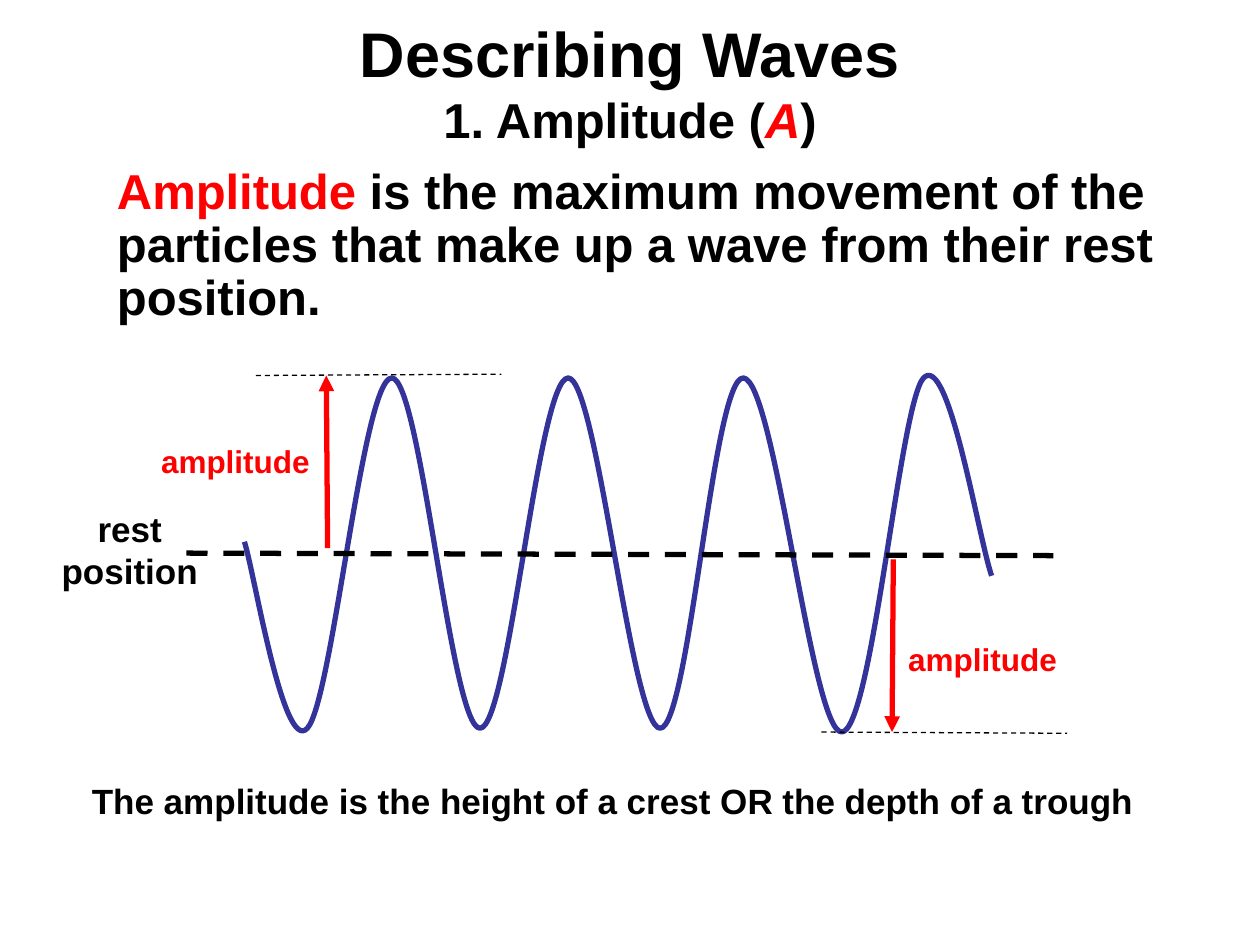
from itertools import chain

from lxml.etree import SubElement
from pptx import Presentation
from pptx.dml.color import RGBColor
from pptx.enum.dml import MSO_LINE
from pptx.enum.shapes import MSO_CONNECTOR
from pptx.enum.text import MSO_ANCHOR, PP_ALIGN
from pptx.oxml.ns import qn
from pptx.util import Inches, Pt

BLACK, RED, BLUE = "000000", "FF0000", "333399"

WAVE_START = (1.94, 4.3)
# Each curve: first control point, second control point, end point
WAVE_CURVES = [
    ((2.02, 4.55), (2.25, 5.99), (2.44, 5.78)),
    ((2.64, 5.56), (2.88, 3), (3.11, 3)),
    ((3.34, 3), (3.58, 5.78), (3.81, 5.78)),
    ((4.04, 5.78), (4.27, 3), (4.51, 3)),
    ((4.74, 3), (5.01, 5.78), (5.24, 5.78)),
    ((5.47, 5.78), (5.66, 2.99), (5.9, 3)),
    ((6.15, 3.01), (6.44, 5.81), (6.68, 5.81)),
    ((6.92, 5.81), (7.14, 3.21), (7.33, 3)),
    ((7.53, 2.79), (7.76, 4.24), (7.87, 4.57)),
]


def rgb(color):
    return RGBColor.from_string(color)


def add_text(shapes, box, align=PP_ALIGN.LEFT, anchor=MSO_ANCHOR.TOP):
    """Add an empty text box and return its first paragraph."""
    tf = shapes.add_textbox(*map(Inches, box)).text_frame
    tf.word_wrap = True
    tf.vertical_anchor = anchor
    p = tf.paragraphs[0]
    p.alignment = align
    return p


def add_run(p, text, size, color=BLACK, italic=False):
    r = p.add_run()
    r.text = text
    font = r.font
    font.name, font.size = "Arial", Pt(size)
    font.bold, font.italic = True, italic
    font.color.rgb = rgb(color)


def add_line(shapes, start, end, color, width, dashed=False, arrow=False):
    ends = map(Inches, (*start, *end))
    line = shapes.add_connector(MSO_CONNECTOR.STRAIGHT, *ends)
    line.line.color.rgb = rgb(color)
    line.line.width = Pt(width)
    if dashed:
        line.line.dash_style = MSO_LINE.DASH
    if arrow:
        SubElement(line.line._get_or_add_ln(), qn("a:tailEnd"), type="triangle")
    SubElement(line._element.spPr, qn("a:effectLst"))


def bend_segments(shape):
    """Turn every three straight segments of a freeform into one cubic curve."""
    segments = list(shape._element.iter(qn("a:lnTo")))
    outline = segments[0].getparent()
    for i in range(0, len(segments), 3):
        curve = SubElement(outline, qn("a:cubicBezTo"))
        for segment in segments[i:i + 3]:
            curve.append(segment[0])
            outline.remove(segment)


def add_wave(shapes):
    builder = shapes.build_freeform(*map(Inches, WAVE_START), scale=1.0)
    points = [(Inches(x), Inches(y)) for x, y in chain(*WAVE_CURVES)]
    builder.add_line_segments(points, close=False)
    wave = builder.convert_to_shape()
    bend_segments(wave)
    wave.shadow.inherit = False
    wave.fill.background()
    wave.line.color.rgb = rgb(BLUE)
    wave.line.width = Pt(3)


def add_amplitude_label(shapes, left, top):
    add_run(add_text(shapes, (left, top, 1.47, 0.32)), "amplitude", 18, RED)


def add_amplitude_lines(shapes, arrow, level):
    """Add an amplitude arrow and the level of the crest or trough it meets."""
    add_line(shapes, *arrow, RED, 3, arrow=True)
    add_line(shapes, *level, BLACK, 0.75, dashed=True)


def add_rest_position(shapes):
    group = shapes.add_group_shape().shapes
    add_line(group, (1.48, 4.39), (8.36, 4.41), BLACK, 3, dashed=True)
    p = add_text(group, (0.3, 3.98, 1.46, 0.77), PP_ALIGN.CENTER)
    add_run(p, "rest position", 20)


def main():
    prs = Presentation()
    prs.slide_width, prs.slide_height = Inches(10), Inches(7.5)
    s = prs.slides.add_slide(prs.slide_layouts[6])
    shapes = s.shapes

    title = add_text(shapes, (0.5, 0.3, 9, 0.69), PP_ALIGN.CENTER, MSO_ANCHOR.MIDDLE)
    add_run(title, "Describing Waves", 36)
    title.add_line_break()
    add_run(title, "1. Amplitude (", 28)
    add_run(title, "A", 28, RED, italic=True)
    add_run(title, ")", 28)

    definition = add_text(shapes, (0.83, 1.28, 8.6, 1.4))
    definition.line_spacing = 0.9
    add_run(definition, "Amplitude", 28, RED)
    add_run(definition, " is the maximum movement of the particles that make up "
            "a wave from their rest position.", 28)

    add_wave(shapes)

    crest = shapes.add_group_shape().shapes
    add_amplitude_label(crest, 1.18, 3.46)
    add_amplitude_lines(crest, ((2.6, 4.35), (2.59, 2.98)),
                        ((2.03, 2.98), (3.98, 2.97)))

    trough = shapes.add_group_shape().shapes
    add_amplitude_lines(trough, ((7.09, 4.44), (7.08, 5.81)),
                        ((6.52, 5.81), (8.47, 5.82)))
    add_amplitude_label(trough, 7.11, 5.03)

    caption = add_text(shapes, (0.63, 6.14, 8.65, 0.43))
    add_run(caption, "The amplitude is the height of a crest OR the depth of a trough", 20)
    add_rest_position(shapes)

    prs.save("out.pptx")


if __name__ == "__main__":
    main()
